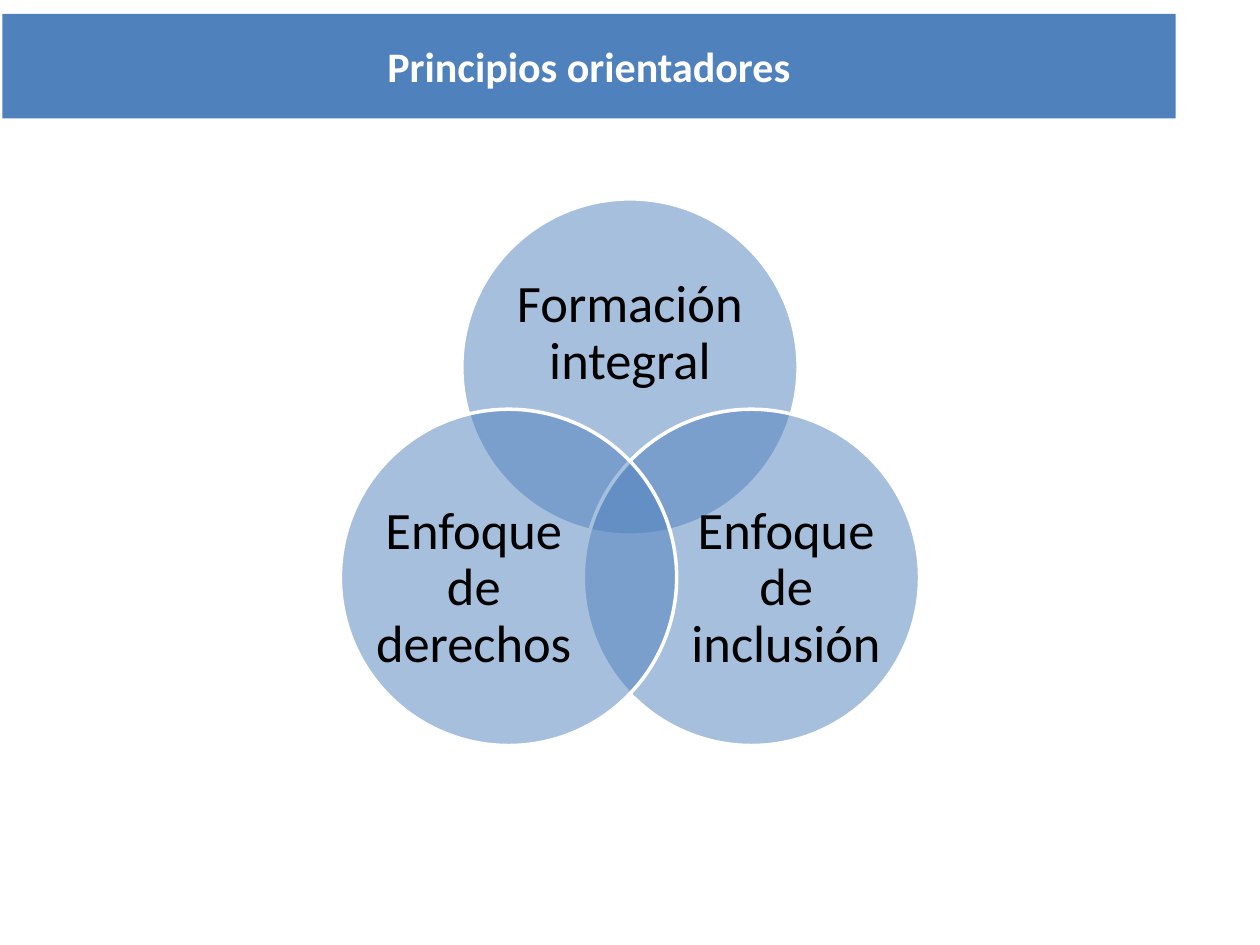
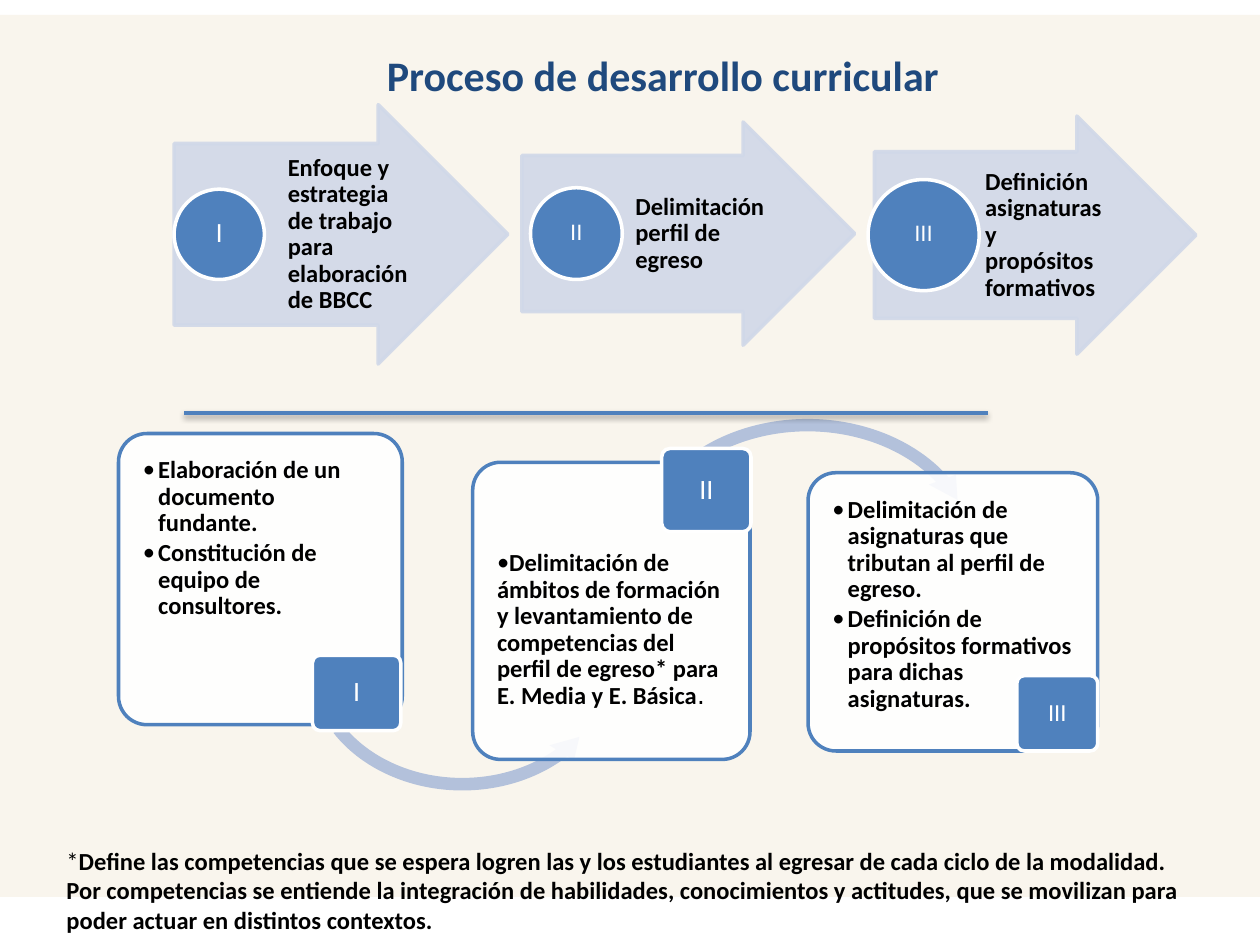
"""Build two slides on curricular principles and process."""
from math import cos, radians, sin

from lxml import etree
from pptx import Presentation
from pptx.dml.color import RGBColor
from pptx.enum.shapes import MSO_CONNECTOR, MSO_SHAPE
from pptx.enum.text import MSO_ANCHOR, PP_ALIGN
from pptx.oxml.ns import qn
from pptx.util import Cm, Pt

ELLIPSE = MSO_SHAPE.OVAL
RECTANGLE = MSO_SHAPE.RECTANGLE
ROUNDED = MSO_SHAPE.ROUNDED_RECTANGLE
RIGHT_ARROW = MSO_SHAPE.RIGHT_ARROW
CIRCULAR_ARROW = MSO_SHAPE.CIRCULAR_ARROW
LEFT_CIRCULAR_ARROW = MSO_SHAPE.LEFT_CIRCULAR_ARROW
STRAIGHT = MSO_CONNECTOR.STRAIGHT
CENTER, LEFT = PP_ALIGN.CENTER, PP_ALIGN.LEFT
MIDDLE, TOP = MSO_ANCHOR.MIDDLE, MSO_ANCHOR.TOP

BLUE, NAVY, WHITE, BLACK = "4F81BD", "1F497D", "FFFFFF", "000000"
CREAM, PALE_BLUE, ARC_BLUE = "F9F5ED", "D0D8E8", "B3C1DB"
BODY_FONT, NUMBER_FONT = "Calibri", "DejaVu Sans"
LINE_WIDTH = 2
TITLE = {"size": Pt(24), "bold": True, "name": BODY_FONT}
BODY = {"size": Pt(14), "bold": True, "name": BODY_FONT}
CIRCLE_LABEL = {"size": Pt(30), "name": BODY_FONT}
DEFAULT_INSETS = (0.25, 0.13, 0.25, 0.13)
NO_INSETS = (0, 0, 0, 0)

CIRCLES = [
    ("Formación integral", -90, (0, -0.67), (4.98, 3.05)),
    ("Enfoque de inclusión", 30, (0.7, 0.23), (4.06, 3.73)),
    ("Enfoque de derechos", 150, (-0.7, 0.23), (4.06, 3.73)),
]
CARDS = [
    {
        "box": (2.39, 8.74, 5.72, 5.87),
        "text_top": 0.13,
        "items": [["Elaboración de un documento fundante."],
                  ["Constitución de equipo de consultores."]],
        "indent": 0.31,
        "badge": ("I", 16, (3.91, 4.47, 1.78, 1.52)),
        "arc": (LEFT_CIRCULAR_ARROW, (3.68, 1.98, 6.5, 5.38),
                (0.047, 5.95, 24.83, 91.37, 0.054)),
    },
    {
        "box": (9.53, 9.32, 5.59, 5.99),
        "text_top": 1.42,
        "items": [["Delimitación de ámbitos de formación y levantamiento de "
                   "competencias del perfil de egreso* para E. Media y E. Básica",
                   (".", {"name": NUMBER_FONT, "bold": False})]],
        "indent": 0,
        "badge": ("II", 16, (3.81, -0.28, 1.8, 1.68)),
        "arc": (CIRCULAR_ARROW, (3.12, -1.04, 7.26, 5.82),
                (0.043, 5.45, 198.46, 131.42, 0.05)),
    },
    {
        "box": (16.29, 9.53, 5.84, 5.61),
        "text_top": 0.13,
        "items": [["Delimitación de asignaturas que tributan al perfil de egreso."],
                  ["Definición de propósitos formativos para dichas asignaturas."]],
        "indent": 0.31,
        "badge": ("III", 14, (4.21, 4.09, 1.63, 1.52)),
        "arc": None,
    },
]
STEPS = [
    ((3.51, 2.11, 6.73, 5.23), "I", 14, 1.82, 0.91, 3.28,
     "Enfoque y estrategia de trabajo para elaboración de BBCC"),
    ((10.52, 2.46, 6.71, 4.5), "II", 12, 1.85, 1.1, 3.45,
     "Delimitación perfil de egreso"),
    ((17.63, 2.34, 6.48, 4.8), "III", 12, 2.24, 0.99, 3.18,
     "Definición asignaturas y propósitos formativos"),
]


def color(value):
    """Turn a hex string into a colour."""
    return RGBColor.from_string(value)


def lengths(values):
    """Turn centimetre numbers into lengths."""
    return [Cm(value) for value in values]


def centered(x, y, width, height):
    """Return the box of a given size around a centre."""
    return x - width / 2, y - height / 2, width, height


def inside(box, part):
    """Return a part's box, given relative to its parent box."""
    return box[0] + part[0], box[1] + part[1], part[2], part[3]


def set_alpha(parent, percent):
    """Make the colour below a fill or line element see-through."""
    etree.SubElement(parent.find(".//" + qn("a:srgbClr")), qn("a:alpha"),
                     val=str(percent * 1000))


def add_shape(slide, kind, box, fill, line=None, alpha=None, line_alpha=None,
              adjustments=()):
    """Add a preset shape with flat fill and optional outline."""
    shape = slide.shapes.add_shape(kind, *lengths(box))
    shape.shadow.inherit = False
    shape.fill.solid()
    shape.fill.fore_color.rgb = color(fill)
    properties = shape.element.spPr
    if alpha:
        set_alpha(properties.find(qn("a:solidFill")), alpha)
    if line:
        shape.line.color.rgb = color(line)
        shape.line.width = Pt(LINE_WIDTH)
    else:
        shape.line.fill.background()
    if line_alpha:
        set_alpha(properties.find(qn("a:ln")), line_alpha)
    for index, value in enumerate(adjustments):
        shape.adjustments[index] = value
    return shape


def write(shape, paragraphs, style, ink=BLACK, align=LEFT, anchor=MIDDLE,
          insets=DEFAULT_INSETS, spacing=0.9, bullet_indent=None):
    """Fill a shape with paragraphs made of plain or restyled runs."""
    frame = shape.text_frame
    margins = zip(("left", "top", "right", "bottom"), lengths(insets))
    settings = {"word_wrap": True, "vertical_anchor": anchor}
    settings.update({f"margin_{side}": value for side, value in margins})
    for name, value in settings.items():
        setattr(frame, name, value)
    for index, runs in enumerate(paragraphs):
        paragraph = frame.add_paragraph() if index else frame.paragraphs[0]
        paragraph.alignment = align
        paragraph.line_spacing = spacing
        if bullet_indent is not None:
            add_bullet(paragraph, bullet_indent)
        for part in runs:
            text, changes = (part, {}) if isinstance(part, str) else part
            run = paragraph.add_run()
            run.text = text
            for name, value in {**style, **changes}.items():
                setattr(run.font, name, value)
            run.font.color.rgb = color(ink)


def add_bullet(paragraph, indent):
    """Give a paragraph a round bullet with a hanging indent."""
    paragraph.space_after = Pt(2)
    properties = paragraph._p.get_or_add_pPr()
    properties.set("marL", str(Cm(indent)))
    properties.set("indent", str(-Cm(indent)))
    etree.SubElement(properties, qn("a:buFont"), typeface=BODY_FONT)
    etree.SubElement(properties, qn("a:buChar"), char="•")


def add_text(slide, box, paragraphs, style, **options):
    """Add a text box."""
    write(slide.shapes.add_textbox(*lengths(box)), paragraphs, style, **options)


def add_number(slide, kind, box, number, style, adjustments=()):
    """Add a blue numbered marker with a white outline."""
    marker = add_shape(slide, kind, box, BLUE, WHITE, adjustments=adjustments)
    write(marker, [[number]], style, ink=WHITE, align=CENTER, insets=NO_INSETS)


def add_venn(slide, box):
    """Draw three overlapping circles around the centre of the box."""
    left, top, width, height = box
    diameter = 6.78
    orbit = (height - diameter) * 2 / 3
    center_x, center_y = left + width / 2, top + diameter / 2 + orbit
    for label, angle, shift, size in CIRCLES:
        x = center_x + orbit * cos(radians(angle))
        y = center_y + orbit * sin(radians(angle))
        add_shape(slide, ELLIPSE, centered(x, y, diameter, diameter),
                  BLUE, WHITE, alpha=50)
        add_text(slide, centered(x + shift[0], y + shift[1], *size), [[label]],
                 CIRCLE_LABEL, align=CENTER, insets=NO_INSETS)


def add_card(slide, box, text_top, items, indent, badge, arc):
    """Draw a bulleted card, the arc leaving it and its badge."""
    width, height = box[2:]
    add_shape(slide, ROUNDED, box, WHITE, BLUE, alpha=90, adjustments=(0.1,))
    text_box = inside(box, (0.13, text_top, width - 0.26, height - text_top - 0.13))
    add_text(slide, text_box, items, BODY, anchor=TOP, insets=(0.36,) * 4,
             bullet_indent=indent)
    if arc:
        kind, arc_box, adjustments = arc
        add_shape(slide, kind, inside(box, arc_box), ARC_BLUE,
                  adjustments=adjustments)
    number, size, badge_box = badge
    add_number(slide, ROUNDED, inside(box, badge_box), number,
               {"size": Pt(size), "name": BODY_FONT}, (0.1,))


def add_step(slide, box, number, size, diameter, circle_x, text_width, text):
    """Draw a block arrow with its text and numbered circle."""
    width, height = box[2:]
    add_shape(slide, RIGHT_ARROW, box, PALE_BLUE, PALE_BLUE, alpha=90,
              line_alpha=90, adjustments=(0.7, 0.5))
    text_box = inside(box, (width / 4, height * 0.15, text_width, height * 0.7))
    add_text(slide, text_box, [[text]], BODY, insets=(0.61, 0.03, 0.05, 0.03))
    circle = centered(circle_x, height / 2, diameter, diameter)
    add_number(slide, ELLIPSE, inside(box, circle), number,
               {"size": Pt(size), "name": NUMBER_FONT})


def add_divider(slide, left, y, width):
    """Draw a horizontal line with a soft shadow."""
    line = slide.shapes.add_connector(
        STRAIGHT, *lengths((left, y, left + width, y)))
    line.line.color.rgb = color(BLUE)
    line.line.width = Pt(LINE_WIDTH)
    effects = etree.SubElement(line.element.spPr, qn("a:effectLst"))
    shadow = etree.SubElement(effects, qn("a:outerShdw"), blurRad=str(Pt(3.1)),
                              dist=str(Pt(1.6)), dir="5400000", rotWithShape="0")
    etree.SubElement(shadow, qn("a:srgbClr"), val=BLACK)
    set_alpha(shadow, 38)


def build_principles(slide):
    """Build the slide of guiding principles."""
    add_venn(slide, (6.86, 4.01, 11.68, 11.02))
    band = add_shape(slide, RECTANGLE, (0.05, 0.28, 23.65, 2.11), BLUE)
    write(band, [["Principios orientadores"]], TITLE, ink=WHITE, align=CENTER,
          spacing=1)


def build_process(slide):
    """Build the slide of the curricular process."""
    add_shape(slide, RECTANGLE, (0, 0.3, 25.4, 17.78), CREAM)
    for card in CARDS:
        add_card(slide, **card)
    for step in STEPS:
        add_step(slide, *step)
    add_divider(slide, 3.71, 8.33, 16.2)
    note = ("Define las competencias que se espera logren las y los estudiantes al "
            "egresar de cada ciclo de la modalidad. Por competencias se entiende la "
            "integración de habilidades, conocimientos y actitudes, que se movilizan "
            "para poder actuar en distintos contextos.")
    add_text(slide, (1.09, 16.92, 23.19, 2.06), [[("*", {"bold": False}), note]],
             BODY, anchor=TOP, spacing=1)
    add_text(slide, (2.57, 0.53, 21.59, 1.96),
             [["Proceso de desarrollo curricular"]], TITLE, ink=NAVY,
             align=CENTER, spacing=1)


def main():
    """Build and save the presentation."""
    presentation = Presentation()
    presentation.slide_width, presentation.slide_height = Cm(25.4), Cm(19.05)
    for build in (build_principles, build_process):
        build(presentation.slides.add_slide(presentation.slide_layouts[6]))
    presentation.save("out.pptx")


if __name__ == "__main__":
    main()
